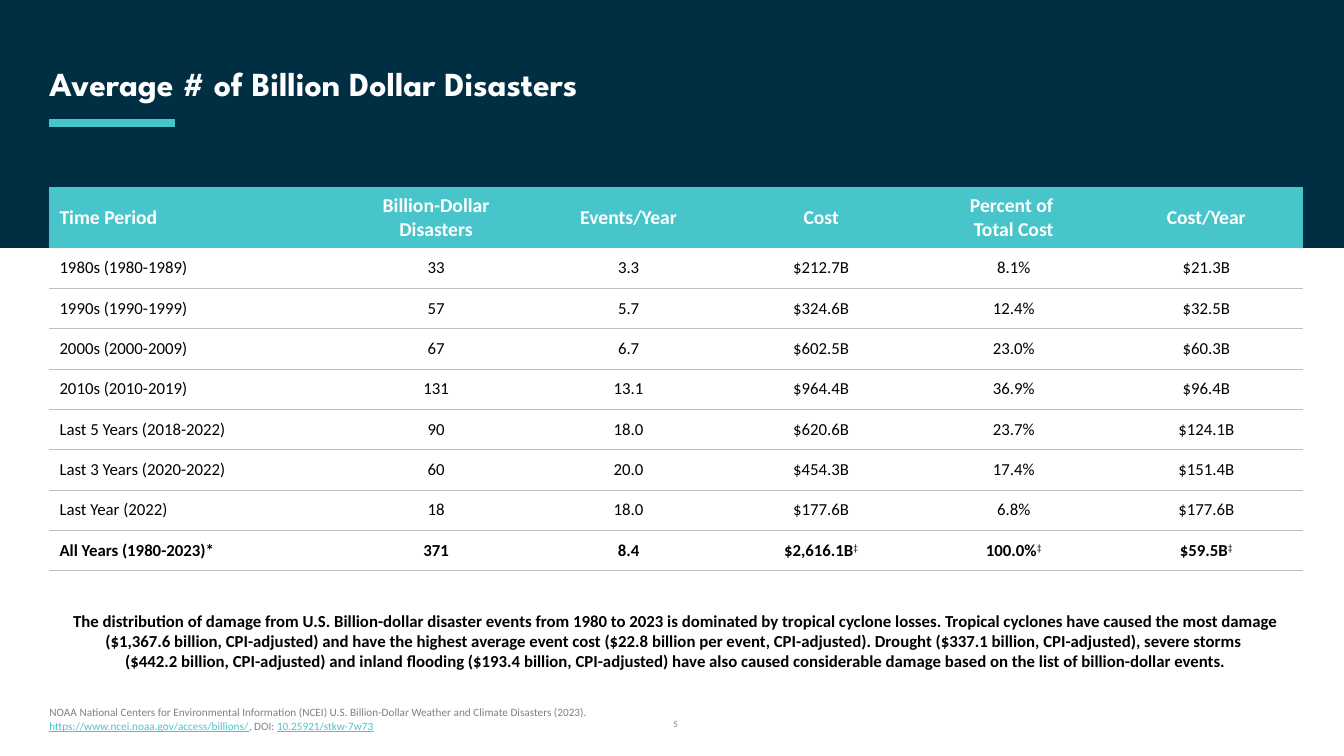
from copy import deepcopy

from lxml.etree import SubElement
from pptx import Presentation
from pptx.dml.color import RGBColor
from pptx.enum.shapes import MSO_CONNECTOR, MSO_SHAPE
from pptx.enum.text import MSO_ANCHOR, MSO_AUTO_SIZE, PP_ALIGN
from pptx.oxml.ns import qn
from pptx.util import Inches, Pt

NAVY, TEAL, WHITE, BLACK = "002E42", "47C5CA", "FFFFFF", "000000"
RULE_GREY, SOURCE_GREY, NUMBER_GREY = "BFBFBF", "808080", "8C8C8C"
NO_STYLE = "{2D5ABB26-0587-4C30-8999-92F81FD0307C}"
LEFT, WIDTH = 0.49, 12.43

HEADERS = ["Time Period", "Billion-Dollar Disasters", "Events/Year", "Cost",
           "Percent of \nTotal Cost", "Cost/Year"]
PERIODS = [
    ["1980s (1980-1989)", "33", "3.3", "$212.7B", "8.1%", "$21.3B"],
    ["1990s (1990-1999)", "57", "5.7", "$324.6B", "12.4%", "$32.5B"],
    ["2000s (2000-2009)", "67", "6.7", "$602.5B", "23.0%", "$60.3B"],
    ["2010s (2010-2019)", "131", "13.1", "$964.4B", "36.9%", "$96.4B"],
    ["Last 5 Years (2018-2022)", "90", "18.0", "$620.6B", "23.7%", "$124.1B"],
    ["Last 3 Years (2020-2022)", "60", "20.0", "$454.3B", "17.4%", "$151.4B"],
    ["Last Year (2022)", "18", "18.0", "$177.6B", "6.8%", "$177.6B"],
    ["All Years (1980-2023)*", "371", "8.4", "$2,616.1B‡", "100.0%‡", "$59.5B‡"],
]
SUMMARY = (
    "The distribution of damage from U.S. Billion-dollar disaster events from 1980 to 2023 "
    "is dominated by tropical cyclone losses. Tropical cyclones have caused the most damage "
    "($1,367.6 billion, CPI-adjusted) and have the highest average event cost ($22.8 billion "
    "per event, CPI-adjusted). Drought ($337.1 billion, CPI-adjusted), severe storms \n"
    "($442.2 billion, CPI-adjusted) and inland flooding ($193.4 billion, CPI-adjusted) have "
    "also caused considerable damage based on the list of billion-dollar events.")
SOURCE = [
    ("NOAA National Centers for Environmental Information (NCEI) U.S. Billion-Dollar Weather "
     "and Climate Disasters (2023). \n", False),
    ("https://www.ncei.noaa.gov/access/billions/", True),
    (", DOI: ", False),
    ("10.25921/stkw-7w73", True),
]


def color(value):
    return RGBColor.from_string(value)


class SlideBuilder:
    font_name = "Calibri"

    def __init__(self, presentation):
        self.slide = presentation.slides.add_slide(presentation.slide_layouts[5])
        self.shapes = self.slide.shapes

    def add_text(self, paragraph, text, size, fill, bold=False, underline=None,
                 superscript=False, font_name=None):
        """Add text to a paragraph, with a line break at each newline."""
        for index, line in enumerate(text.split("\n")):
            if index:
                paragraph.add_line_break()
                line_break = paragraph._p.findall(qn("a:br"))[-1]
                line_break.append(deepcopy(run._r.rPr))
            if not line:
                continue
            run = paragraph.add_run()
            run.text = line
            run.font.name = font_name or self.font_name
            run.font.size = Pt(size)
            run.font.bold = bold
            run.font.underline = underline
            run.font.color.rgb = color(fill)
            if superscript:
                run._r.rPr.set("baseline", "30000")

    def set_frame(self, text_frame, anchor, margins):
        text_frame.word_wrap = True
        text_frame.auto_size = MSO_AUTO_SIZE.NONE
        text_frame.vertical_anchor = anchor
        (text_frame.margin_left, text_frame.margin_top,
         text_frame.margin_right, text_frame.margin_bottom) = map(Inches, margins)
        return text_frame.paragraphs[0]

    def band(self, left, top, width, height, fill):
        shape = self.shapes.add_shape(MSO_SHAPE.RECTANGLE, *map(Inches, (left, top, width, height)))
        shape.shadow.inherit = False
        shape.fill.solid()
        shape.fill.fore_color.rgb = color(fill)
        shape.line.fill.background()
        self.shapes._spTree.insert(2, shape._element)  # behind the title

    def title(self, text, left, top, width, height):
        shape = self.shapes.title
        shape.left, shape.top, shape.width, shape.height = map(Inches, (left, top, width, height))
        paragraph = self.set_frame(shape.text_frame, MSO_ANCHOR.BOTTOM, (0, 0.05, 0.1, 0.05))
        paragraph.alignment = PP_ALIGN.LEFT
        paragraph.line_spacing = 0.9
        self.add_text(paragraph, text, 24, WHITE, bold=True, font_name="League Spartan")

    def rule(self, left, right, y, stroke, width):
        line = self.shapes.add_connector(MSO_CONNECTOR.STRAIGHT, Inches(left), Inches(y),
                                         Inches(right), Inches(y))
        line.line.color.rgb = color(stroke)
        line.line.width = Pt(width)
        SubElement(line._element.spPr, qn("a:effectLst"))

    def text_box(self, left, top, width, height, anchor, alignment):
        box = self.shapes.add_textbox(*map(Inches, (left, top, width, height)))
        paragraph = self.set_frame(box.text_frame, anchor, (0, 0, 0, 0))
        paragraph.alignment = alignment
        return paragraph

    def bottom_border(self, cell, stroke, width):
        border = SubElement(cell._tc.get_or_add_tcPr(), qn("a:lnB"), w=str(Pt(width)))
        fill = SubElement(border, qn("a:solidFill"))
        SubElement(fill, qn("a:srgbClr"), val=stroke)

    def table(self, rows, left, top, column_widths, row_heights):
        frame = self.shapes.add_table(len(rows), len(column_widths), Inches(left), Inches(top),
                                      Inches(sum(column_widths)), Inches(sum(row_heights)))
        table = frame.table
        table.horz_banding = False
        table._tbl.tblPr.find(qn("a:tableStyleId")).text = NO_STYLE
        for column, width in zip(table.columns, column_widths):
            column.width = Inches(width)
        for row, height in zip(table.rows, row_heights):
            row.height = Inches(height)
        for row_index, values in enumerate(rows):
            for column_index, value in enumerate(values):
                self.table_cell(table.cell(row_index, column_index), value,
                                is_header=row_index == 0,
                                is_total=row_index == len(rows) - 1,
                                is_label=column_index == 0)

    def table_cell(self, cell, value, is_header, is_total, is_label):
        cell.vertical_anchor = MSO_ANCHOR.MIDDLE
        cell.margin_left = cell.margin_right = Inches(0.1)
        cell.margin_top = cell.margin_bottom = 0
        paragraph = cell.text_frame.paragraphs[0]
        paragraph.alignment = PP_ALIGN.LEFT if is_label else PP_ALIGN.CENTER
        if is_header:
            cell.fill.solid()
            cell.fill.fore_color.rgb = color(TEAL)
            self.add_text(paragraph, value, 14, WHITE, bold=True)
            return
        self.bottom_border(cell, RULE_GREY, 0.5)
        cell.fill.background()
        self.add_text(paragraph, value.rstrip("‡"), 12, BLACK, bold=is_total)
        if value.endswith("‡"):
            self.add_text(paragraph, "‡", 12, BLACK, superscript=True)


def main():
    presentation = Presentation()
    presentation.slide_width, presentation.slide_height = Inches(13.33), Inches(7.5)
    builder = SlideBuilder(presentation)

    # Heading
    builder.band(0, 0, 13.33, 2.46, NAVY)
    builder.title("Average # of Billion Dollar Disasters", LEFT, 0.62, 12.49, 0.46)
    builder.rule(LEFT, 1.74, 1.22, TEAL, 6)

    # Disasters by period
    builder.table([HEADERS] + PERIODS, LEFT, 1.86,
                  [2.88] + [1.91] * (len(HEADERS) - 1), [0.6] + [0.4] * len(PERIODS))

    # Summary
    summary = builder.text_box(LEFT, 6.05, WIDTH, 0.61, MSO_ANCHOR.MIDDLE, PP_ALIGN.CENTER)
    summary.space_after = Pt(6)
    builder.add_text(summary, SUMMARY, 12, BLACK, bold=True)

    # Source and slide number
    source = builder.text_box(LEFT, 7, 9.45, 0.27, MSO_ANCHOR.TOP, PP_ALIGN.LEFT)
    for text, is_address in SOURCE:
        builder.add_text(source, text, 8, TEAL if is_address else SOURCE_GREY,
                         underline=is_address)
    number = builder.text_box(5.2, 7.08, 3, 0.2, MSO_ANCHOR.MIDDLE, PP_ALIGN.CENTER)
    builder.add_text(number, "5", 6.8, NUMBER_GREY)

    presentation.save("out.pptx")


if __name__ == "__main__":
    main()
